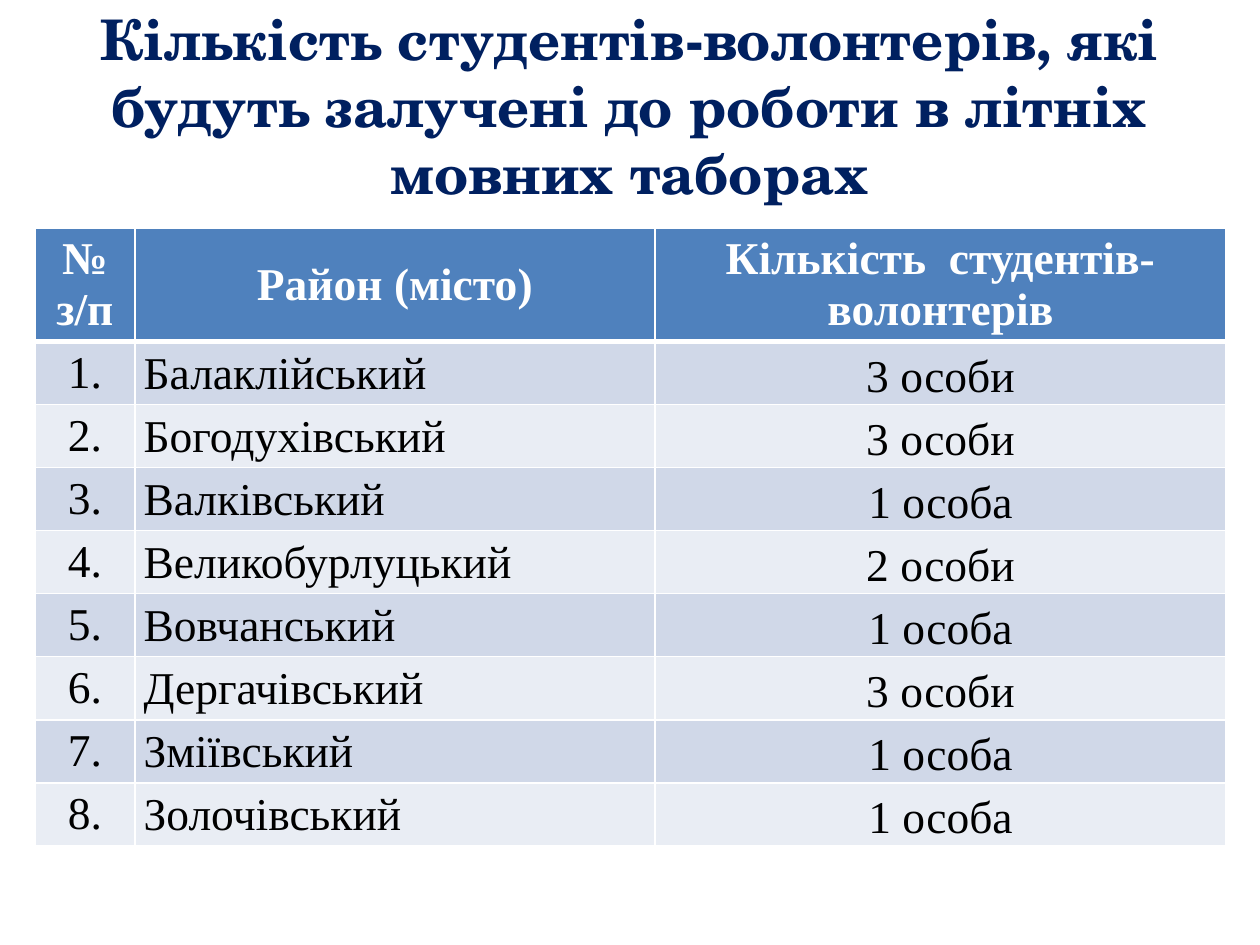
from dataclasses import dataclass

from lxml import etree
from pptx import Presentation
from pptx.dml.color import RGBColor
from pptx.enum.text import MSO_ANCHOR, MSO_AUTO_SIZE, PP_ALIGN
from pptx.oxml.ns import qn
from pptx.util import Inches, Pt

CENTER, LEFT = PP_ALIGN.CENTER, PP_ALIGN.LEFT
TOP, MIDDLE = MSO_ANCHOR.TOP, MSO_ANCHOR.MIDDLE
NO_FIT = MSO_AUTO_SIZE.NONE
TITLE_ONLY = 5

TITLE = "Кількість студентів-волонтерів, які будуть залучені до роботи в літніх мовних таборах"
HEADERS = ("№ з/п", "Район (місто)", "Кількість  студентів-волонтерів")
DISTRICTS = (
    ("Балаклійський", "3 особи"),
    ("Богодухівський", "3 особи"),
    ("Валківський", "1 особа"),
    ("Великобурлуцький", "2 особи"),
    ("Вовчанський", "1 особа"),
    ("Дергачівський", "3 особи"),
    ("Зміївський", "1 особа"),
    ("Золочівський", "1 особа"),
)


@dataclass(frozen=True)
class Theme:
    """Colours, fonts and type sizes of the slide."""
    navy: str = "002060"
    white: str = "FFFFFF"
    black: str = "000000"
    header: str = "4F81BD"
    bands: tuple = ("D0D8E8", "E9EDF4")
    title_font: str = "TeX Gyre Schola"
    table_font: str = "Times New Roman"
    title_size: int = 32
    table_size: int = 26


class Deck:
    """Builds slides in one theme."""

    def __init__(self, theme):
        """Start an empty 4:3 deck."""
        self.theme = theme
        self.prs = Presentation()
        self.prs.slide_width, self.prs.slide_height = Inches(10), Inches(7.5)

    def add_slide(self):
        """Open a new slide with a title placeholder."""
        self.slide = self.prs.slides.add_slide(self.prs.slide_layouts[TITLE_ONLY])

    def style(self, p, font, size, color, bold, align):
        """Format one paragraph."""
        p.alignment = align
        p.font.name, p.font.size, p.font.bold = font, Pt(size), bold
        p.font.color.rgb = RGBColor.from_string(color)

    def title(self, text, top, height):
        """Fill the title across the slide; top and height are in inches."""
        t, sp = self.theme, self.slide.shapes.title
        sp.left, sp.top = 0, Inches(top)
        sp.width, sp.height = self.prs.slide_width, Inches(height)
        tf = sp.text_frame
        tf.text = text
        tf.word_wrap, tf.auto_size, tf.vertical_anchor = True, NO_FIT, MIDDLE
        self.style(tf.paragraphs[0], t.title_font, t.title_size, t.navy, True, CENTER)

    def border(self, cell, side, width):
        """Draw one white cell edge."""
        ln = etree.SubElement(cell._tc.get_or_add_tcPr(), qn(f"a:ln{side}"), w=str(Pt(width)))
        fill = etree.SubElement(ln, qn("a:solidFill"))
        etree.SubElement(fill, qn("a:srgbClr"), val=self.theme.white)

    def cell(self, cell, text, fill, color, edges, bold=False, align=CENTER, anchor=MIDDLE, tight=False):
        """Write and format one table cell."""
        t = self.theme
        for side, width in edges.items():
            self.border(cell, side, width)
        cell.fill.solid()
        cell.fill.fore_color.rgb = RGBColor.from_string(fill)
        cell.text, cell.vertical_anchor = text, anchor
        p = cell.text_frame.paragraphs[0]
        if tight:
            cell.margin_left = cell.margin_right = Inches(0.07)
            cell.margin_top = cell.margin_bottom = 0
            p.line_spacing = 1.15
        self.style(p, t.table_font, t.table_size, color, bold, align)

    def table(self, headers, rows, left, top, widths, head_height, row_height):
        """Add a numbered, banded table; lengths are in inches."""
        t = self.theme
        height = head_height + row_height * len(rows)
        table = self.slide.shapes.add_table(
            len(rows) + 1, len(headers), Inches(left), Inches(top),
            Inches(sum(widths)), Inches(height)).table
        for column, width in zip(table.columns, widths):
            column.width = Inches(width)
        for i, row in enumerate(table.rows):
            row.height = Inches(row_height if i else head_height)
        for j, text in enumerate(headers):
            self.cell(table.cell(0, j), text, t.header, t.white,
                      {"L": 1, "R": 1, "T": 1, "B": 3}, bold=True)
        for i, (name, count) in enumerate(rows, 1):
            fill = t.bands[(i - 1) % 2]
            edges = {"L": 1, "R": 1, "T": 3 if i == 1 else 1, "B": 1}
            self.cell(table.cell(i, 0), f"{i}.", fill, t.black, edges)
            self.cell(table.cell(i, 1), name, fill, t.black, edges, align=LEFT, anchor=TOP, tight=True)
            self.cell(table.cell(i, 2), count, fill, t.black, edges, tight=True)


def main():
    """Build and save the slide."""
    deck = Deck(Theme())
    deck.add_slide()
    deck.title(TITLE, top=0.21, height=1.25)
    deck.table(HEADERS, DISTRICTS, left=0.28, top=1.81,
               widths=(0.79, 4.13, 4.53), head_height=0.9, row_height=0.5)
    deck.prs.save("out.pptx")


if __name__ == "__main__":
    main()
